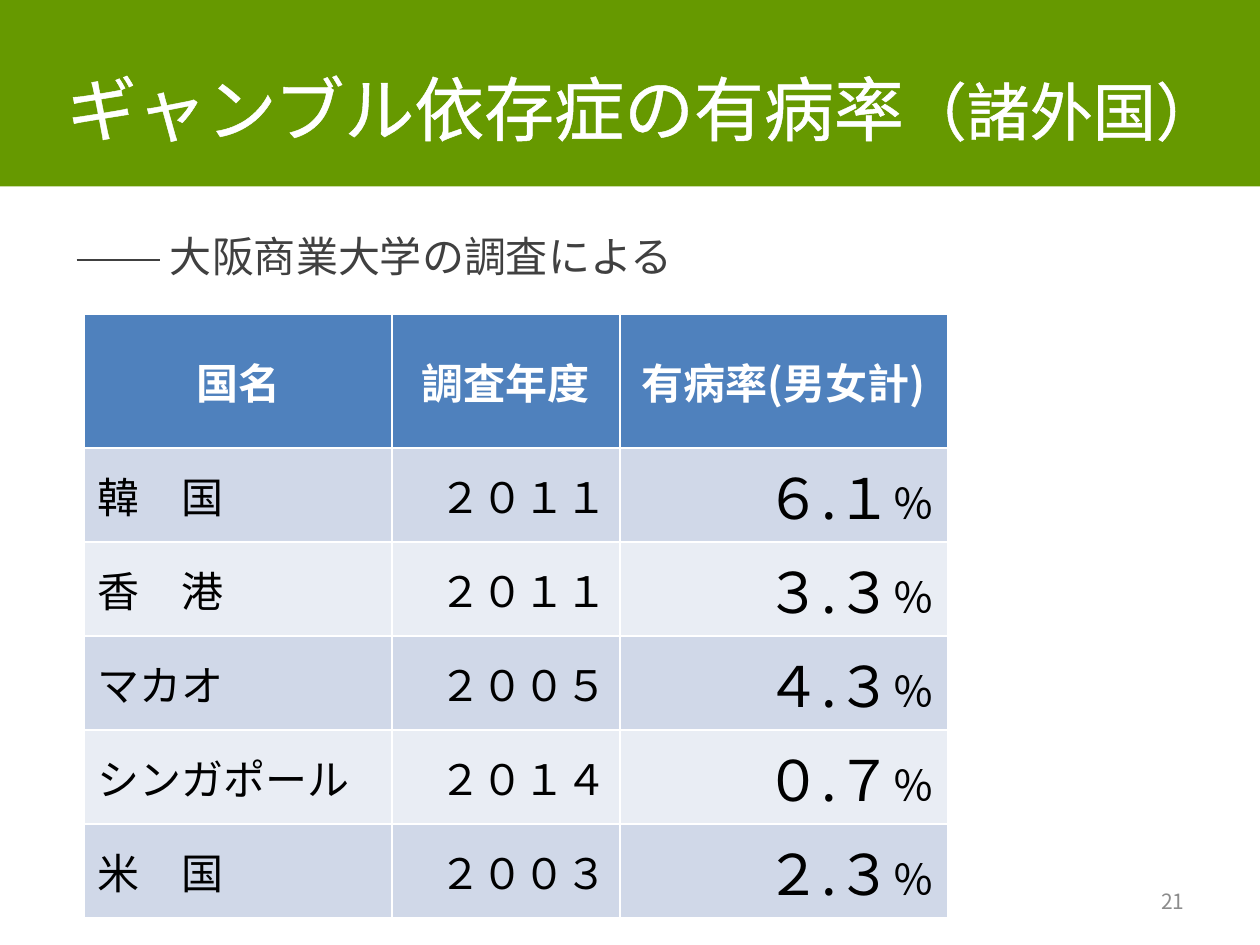
from lxml import etree
from pptx import Presentation
from pptx.dml.color import RGBColor
from pptx.enum import shapes, text
from pptx.oxml.ns import qn
from pptx.util import Inches, Pt

FONT = "Noto Sans CJK JP"
COLORS = {
    "banner": "669900", "white": "FFFFFF", "black": "000000",
    "subtitle": "404040", "number": "8C8C8C",
    "header": "4F81BD", "odd": "D0D8E8", "even": "E9EDF4",
}
LEFT, CENTER, RIGHT = text.PP_ALIGN.LEFT, text.PP_ALIGN.CENTER, text.PP_ALIGN.RIGHT

TITLE = [("ギャンブル依存症の有病率", 40), ("（諸外国）", 36)]
SUBTITLE = " 大阪商業大学の調査による"
HEADERS = ["国名", "調査年度", "有病率(男女計)"]
RATES = [
    ("韓　国", "２０１１", "６.１"),
    ("香　港", "２０１１", "３.３"),
    ("マカオ", "２００５", "４.３"),
    ("シンガポール", "２０１４", "０.７"),
    ("米　国", "２００３", "２.３"),
]
COLUMN_WIDTHS = [2.44, 1.81, 2.6]
HEADER_HEIGHT, ROW_HEIGHT = 0.83, 0.67


def rgb(name):
    return RGBColor.from_string(COLORS[name])


def add_span(para, words, size, color, bold=False):
    span = para.add_run()
    span.text = words
    for name, value in {"name": FONT, "size": Pt(size), "bold": bold}.items():
        setattr(span.font, name, value)
    span.font.color.rgb = rgb(color)
    etree.SubElement(span.font._element, qn("a:ea"), typeface=FONT)
    return span


def outline(span, color, width):
    """Give the letters a line of the same kind as a shape's outline."""
    line = etree.Element(qn("a:ln"), w=str(Pt(width)))
    fill = etree.SubElement(line, qn("a:solidFill"))
    etree.SubElement(fill, qn("a:srgbClr"), val=COLORS[color])
    span.font._element.insert(0, line)


def place(box, left, top, width, height, anchor=text.MSO_ANCHOR.TOP):
    """Set a box's position and frame; return its first paragraph."""
    for name, value in {"left": left, "top": top, "width": width, "height": height}.items():
        setattr(box, name, Inches(value))
    frame = box.text_frame
    for name, value in {"word_wrap": True, "auto_size": text.MSO_AUTO_SIZE.NONE,
                        "vertical_anchor": anchor}.items():
        setattr(frame, name, value)
    return frame.paragraphs[0]


def fill_cell(cell, fill, align, spans, color, bold=False):
    cell.fill.solid()
    cell.fill.fore_color.rgb = rgb(fill)
    cell.vertical_anchor = text.MSO_ANCHOR.MIDDLE
    para = cell.text_frame.paragraphs[0]
    para.alignment = align
    for words, size in spans:
        add_span(para, words, size, color, bold)


def add_banner(page):
    banner = page.shapes.add_shape(shapes.MSO_SHAPE.RECTANGLE, Inches(-0.04), 0,
                                   Inches(10.04), Inches(1.48))
    banner.shadow.inherit = False
    banner.fill.solid()
    banner.fill.fore_color.rgb = rgb("banner")
    banner.line.fill.background()
    # The title placeholder comes first, so the banner goes behind it.
    page.shapes.title._element.addprevious(banner._element)


def add_texts(page):
    para = place(page.shapes.title, 0.43, 0.47, 9.56, 0.76)
    para.alignment = LEFT
    for words, size in TITLE:
        outline(add_span(para, words, size, "white"), "white", 0.75)

    para = place(page.shapes.add_textbox(0, 0, 0, 0), 0.51, 1.78, 5.12, 0.52)
    para.space_after = Pt(18)
    dash = add_span(para, "　　", 24, "subtitle")
    dash.font._element.set("strike", "sngStrike")
    add_span(para, SUBTITLE, 24, "subtitle")

    para = place(page.shapes.add_textbox(0, 0, 0, 0), 7.17, 6.95, 2.33, 0.4,
                 text.MSO_ANCHOR.MIDDLE)
    para.alignment = RIGHT
    add_span(para, "21", 12, "number")


def add_rates(page):
    heights = [HEADER_HEIGHT] + [ROW_HEIGHT] * len(RATES)
    table = page.shapes.add_table(
        len(heights), len(HEADERS), Inches(0.67), Inches(2.49),
        Inches(sum(COLUMN_WIDTHS)), Inches(sum(heights))).table
    for column, width in zip(table.columns, COLUMN_WIDTHS):
        column.width = Inches(width)
    for row, height in zip(table.rows, heights):
        row.height = Inches(height)

    for column, words in enumerate(HEADERS):
        fill_cell(table.cell(0, column), "header", CENTER, [(words, 24)], "white", True)
    for row, (country, year, rate) in enumerate(RATES, 1):
        entries = [(LEFT, [(country, 24)]), (RIGHT, [(year, 24)]),
                   (RIGHT, [(rate, 32), ("％", 24)])]
        for column, (align, spans) in enumerate(entries):
            fill_cell(table.cell(row, column), "odd" if row % 2 else "even",
                      align, spans, "black")


def main():
    deck = Presentation()
    deck.slide_width, deck.slide_height = Inches(10), Inches(7.5)
    page = deck.slides.add_slide(deck.slide_layouts[5])
    add_banner(page)
    add_texts(page)
    add_rates(page)
    deck.save("out.pptx")


if __name__ == "__main__":
    main()
